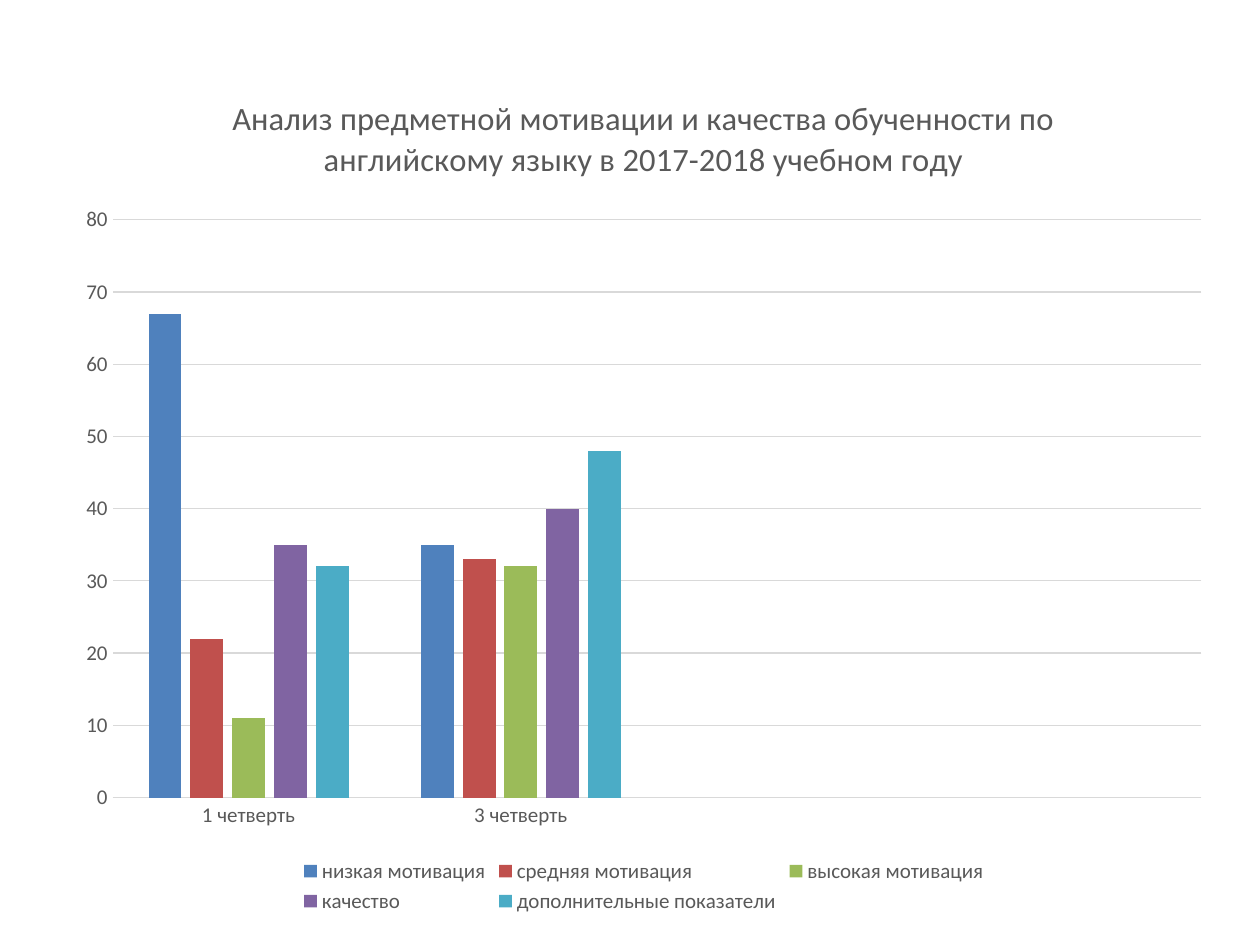
from dataclasses import dataclass

from pptx import Presentation
from pptx.chart.data import CategoryChartData
from pptx.dml.color import RGBColor
from pptx.enum.chart import XL_CHART_TYPE, XL_LEGEND_POSITION, XL_TICK_MARK
from pptx.util import Cm, Pt


@dataclass(frozen=True)
class Theme:
    font: str = "Calibri"
    text: str = "595959"
    grid: str = "D9D9D9"
    title_size: float = 18.6
    label_size: float = 12
    line_width: float = 0.75


THEME = Theme()
TITLE = ("Анализ предметной мотивации и качества обученности по "
         "английскому языку в 2017-2018 учебном году")
# Two quarters are filled in; the right half of the axis stays free.
CATEGORIES = ["1 четверть", "3 четверть", "", ""]
SERIES = [
    ("низкая мотивация", (67, 35), "4F81BD"),
    ("средняя мотивация", (22, 33), "C0504D"),
    ("высокая мотивация", (11, 32), "9BBB59"),
    ("качество", (35, 40), "8064A2"),
    ("дополнительные показатели", (32, 48), "4BACC6"),
]


def style_font(font, size):
    font.name = THEME.font
    font.size = Pt(size)
    font.bold = False
    font.color.rgb = RGBColor.from_string(THEME.text)


def style_line(line):
    line.width = Pt(THEME.line_width)
    line.color.rgb = RGBColor.from_string(THEME.grid)


def add_column_chart(s):
    data = CategoryChartData()
    data.categories = CATEGORIES
    for name, values, _ in SERIES:
        blanks = (None,) * (len(CATEGORIES) - len(values))
        data.add_series(name, values + blanks)
    frame = s.shapes.add_chart(XL_CHART_TYPE.COLUMN_CLUSTERED, Cm(1.27), Cm(1.32),
                               Cm(23.42), Cm(17.2), data)
    return frame.chart


def style_title(chart):
    chart.has_title = True
    tf = chart.chart_title.text_frame
    tf.text = TITLE
    style_font(tf.paragraphs[0].runs[0].font, THEME.title_size)
    chart.chart_title.include_in_layout = False


def style_axes(chart):
    for axis in (chart.category_axis, chart.value_axis):
        axis.major_tick_mark = XL_TICK_MARK.NONE
        axis.minor_tick_mark = XL_TICK_MARK.NONE
        style_font(axis.tick_labels.font, THEME.label_size)
    style_line(chart.category_axis.format.line)

    axis = chart.value_axis
    axis.minimum_scale, axis.maximum_scale, axis.major_unit = 0, 80, 10
    axis.format.line.fill.background()
    axis.has_major_gridlines = True
    style_line(axis.major_gridlines.format.line)


def style_columns(chart):
    plot = chart.plots[0]
    plot.vary_by_categories = False
    plot.gap_width = 219
    plot.overlap = -27
    for series, (_, _, color) in zip(plot.series, SERIES):
        series.format.fill.solid()
        series.format.fill.fore_color.rgb = RGBColor.from_string(color)


def style_legend(chart):
    chart.has_legend = True
    chart.legend.position = XL_LEGEND_POSITION.BOTTOM
    chart.legend.include_in_layout = False
    style_font(chart.legend.font, THEME.label_size)


def main():
    prs = Presentation()
    prs.slide_width, prs.slide_height = Cm(25.4), Cm(19.05)
    s = prs.slides.add_slide(prs.slide_layouts.get_by_name("Blank"))
    chart = add_column_chart(s)
    style_title(chart)
    style_axes(chart)
    style_columns(chart)
    style_legend(chart)
    prs.save("out.pptx")


if __name__ == "__main__":
    main()
